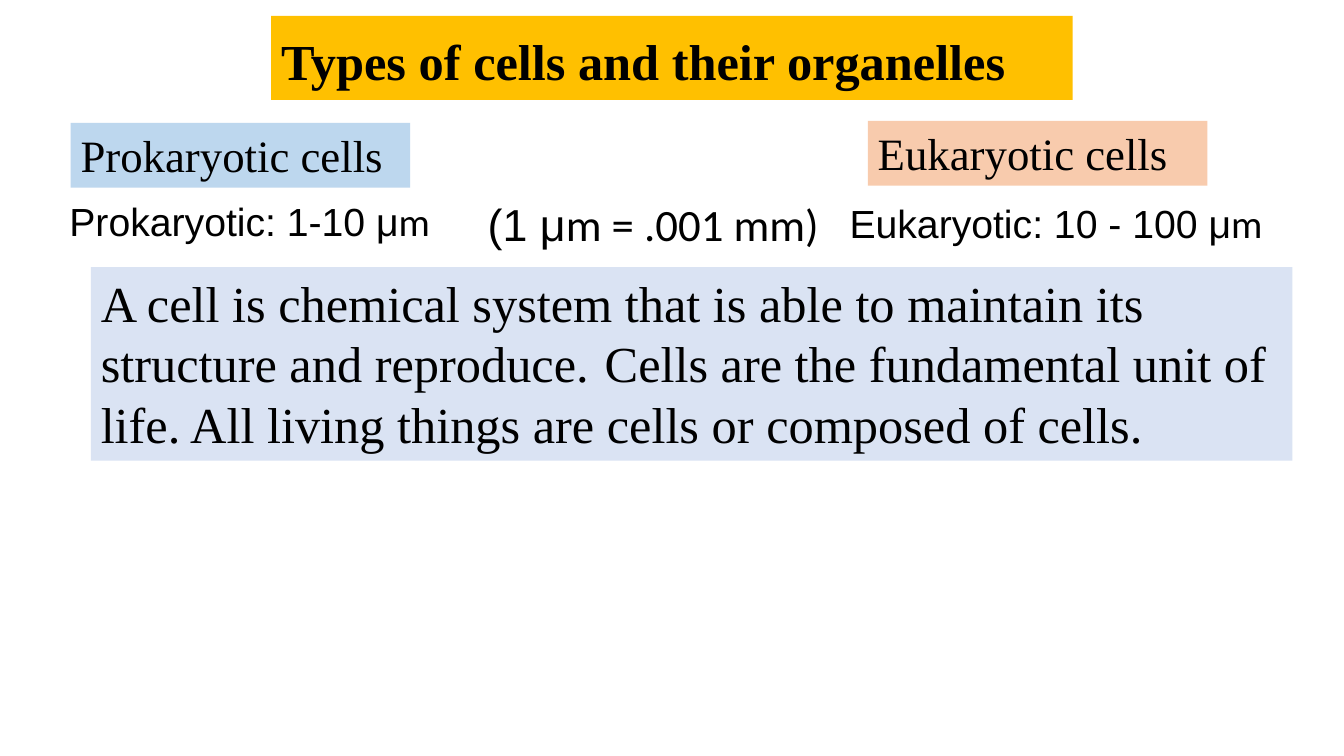
from dataclasses import dataclass

from pptx import Presentation
from pptx.dml.color import RGBColor
from pptx.enum.text import MSO_ANCHOR as Anchor, MSO_AUTO_SIZE as AutoSize, PP_ALIGN as Align
from pptx.util import Cm, Pt


@dataclass(frozen=True)
class Theme:
    serif: str = "Times New Roman"
    sans: str = "Arial"
    unit: str = "Calibri"
    ink: str = "000000"
    title_fill: str = "FFC000"
    prokaryote_fill: str = "BDD7EE"
    eukaryote_fill: str = "F8CBAD"
    definition_fill: str = "DAE3F3"
    large: int = 36
    medium: int = 32
    small: int = 28


class CellSlide:
    def __init__(self, deck, theme):
        self.theme = theme
        self.page = deck.slides.add_slide(deck.slide_layouts[5])

    def style(self, font, name, size, bold=False):
        font.name, font.size, font.bold = name, Pt(size), bold
        font.color.rgb = RGBColor.from_string(self.theme.ink)

    def paint(self, box, color):
        box.fill.solid()
        box.fill.fore_color.rgb = RGBColor.from_string(color)

    def frame(self, box, anchor=Anchor.TOP):
        frame = box.text_frame
        frame.word_wrap = True
        frame.auto_size = AutoSize.SHAPE_TO_FIT_TEXT
        frame.vertical_anchor = anchor
        return frame

    def title(self, text, left, top, width, height):
        box = self.page.shapes.title
        box.left, box.top, box.width, box.height = map(Cm, (left, top, width, height))
        self.paint(box, self.theme.title_fill)
        para = self.frame(box).paragraphs[0]
        para.text = text
        para.alignment = Align.JUSTIFY
        para.line_spacing = 1.15
        para.space_after = Pt(10)
        self.style(para.font, self.theme.serif, self.theme.large, bold=True)

    def text_box(self, left, top, width, height):
        return self.page.shapes.add_textbox(*map(Cm, (left, top, width, height)))

    def panel(self, text, place, color, size):
        box = self.text_box(*place)
        self.paint(box, color)
        para = self.frame(box).paragraphs[0]
        para.text = text
        self.style(para.font, self.theme.serif, size)

    def measure(self, amount, unit, place, size, anchor=Anchor.TOP):
        para = self.frame(self.text_box(*place), anchor).paragraphs[0]
        for text, name in ((amount, self.theme.sans), (unit, self.theme.unit)):
            span = para.add_run()
            span.text = text
            self.style(span.font, name, size)


def main():
    theme = Theme()
    deck = Presentation()
    deck.slide_width, deck.slide_height = Cm(33.87), Cm(19.05)
    slide = CellSlide(deck, theme)

    # Title
    slide.title("Types of cells and their organelles", 6.83, 0.4, 20.2, 1.9)

    # Cell types
    label_size = (8.56, 1.63)
    slide.panel("Prokaryotic cells", (1.78, 3.1, *label_size), theme.prokaryote_fill, theme.medium)
    slide.panel("Eukaryotic cells", (21.87, 3.05, *label_size), theme.eukaryote_fill, theme.medium)

    # Definition of a cell
    slide.panel(
        "A cell is chemical system that is able to maintain its structure and reproduce.\t"
        "Cells are the fundamental unit of life. All living things are cells or composed of cells.",
        (2.29, 6.73, 30.28, 4.88), theme.definition_fill, theme.large)

    # Cell sizes
    slide.measure("Prokaryotic: 1-10 μ", "m", (1.5, 4.85, 10.52, 1.45), theme.small, Anchor.MIDDLE)
    slide.measure("Eukaryotic: 10 - 100 μ", "m", (21.16, 4.9, 11.28, 1.45), theme.small)
    slide.measure("(1 μ", "m = .001 mm)", (12.04, 4.83, 9.58, 1.63), theme.medium)

    deck.save("out.pptx")


if __name__ == "__main__":
    main()
